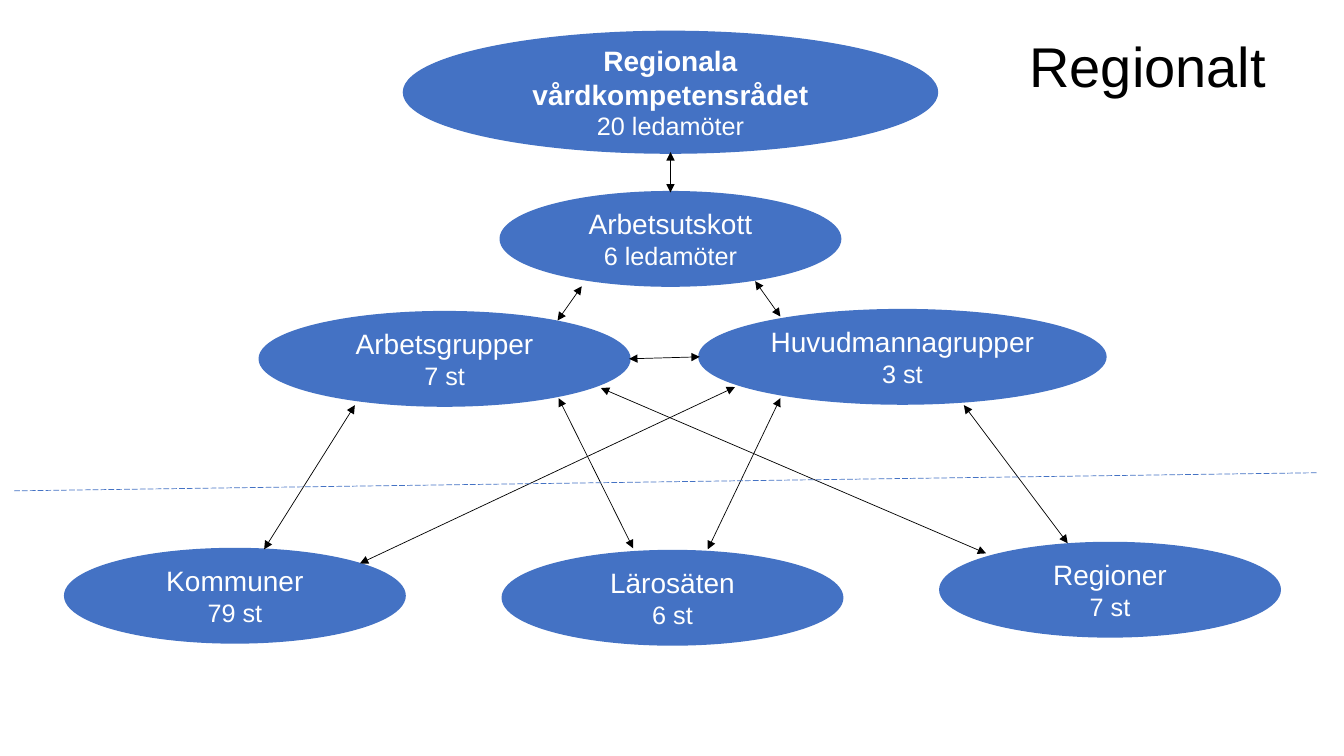
from lxml import etree
from pptx import Presentation
from pptx.dml.color import RGBColor
from pptx.enum import dml, shapes, text
from pptx.oxml.ns import qn
from pptx.util import Inches, Pt

FONT = "Arial"
BLUE, BLACK, WHITE = "4472C4", "000000", "FFFFFF"


def colour(value):
    return RGBColor.from_string(value)


def add_span(para, words, size, shade, bold=False):
    span = para.add_run()
    span.text = words
    span.font.name = FONT
    span.font.size = Pt(size)
    span.font.bold = bold
    span.font.color.rgb = colour(shade)


def add_oval(page, left, top, width, height, name, count, bold=False):
    oval = page.shapes.add_shape(shapes.MSO_SHAPE.OVAL, Inches(left), Inches(top),
                                 Inches(width), Inches(height))
    oval.shadow.inherit = False
    oval.fill.solid()
    oval.fill.fore_color.rgb = colour(BLUE)
    oval.line.color.rgb = colour(BLUE)
    oval.line.width = Pt(2.25)
    frame = oval.text_frame
    frame.word_wrap = True
    frame.vertical_anchor = text.MSO_ANCHOR.MIDDLE
    name_para, count_para = frame.paragraphs[0], frame.add_paragraph()
    add_span(name_para, name, 20, WHITE, bold)
    add_span(count_para, count, 18, WHITE)
    for para in (name_para, count_para):
        para.alignment = text.PP_ALIGN.CENTER
    return oval


def add_line(page, start, end, shade):
    line = page.shapes.add_connector(shapes.MSO_CONNECTOR.STRAIGHT, *start, *end)
    line.line.color.rgb = colour(shade)
    line.line.width = Pt(0.5)
    etree.SubElement(line._element.spPr, qn("a:effectLst"))
    return line


def add_double_arrow(page, start, end):
    outline = add_line(page, start, end, BLACK).line._get_or_add_ln()
    for tag in ("a:headEnd", "a:tailEnd"):
        etree.SubElement(outline, qn(tag), type="triangle")


def draw_title(page, left, top, width, height):
    title = page.shapes.title
    title.left, title.top = Inches(left), Inches(top)
    title.width, title.height = Inches(width), Inches(height)
    frame = title.text_frame
    frame.word_wrap = False
    frame.auto_size = text.MSO_AUTO_SIZE.SHAPE_TO_FIT_TEXT
    frame.vertical_anchor = text.MSO_ANCHOR.TOP
    para = frame.paragraphs[0]
    para.alignment = text.PP_ALIGN.LEFT
    para.line_spacing = 1.0
    add_span(para, "Regionalt", 40, BLACK)


def draw_council(page, left, top):
    """Council, its committee and the two kinds of groups."""
    return {
        "council": add_oval(page, left + 1.43, top, 5.28, 1.19,
                            "Regionala vårdkompetensrådet", "20 ledamöter", bold=True),
        "committee": add_oval(page, left + 2.39, top + 1.59, 3.36, 0.92,
                              "Arbetsutskott", "6 ledamöter"),
        "work": add_oval(page, left, top + 2.78, 3.66, 0.92, "Arbetsgrupper", "7 st"),
        "principals": add_oval(page, left + 4.36, top + 2.76, 4.02, 0.92,
                               "Huvudmannagrupper", "3 st"),
    }


def draw_parties(page, left, top):
    """Row of the parties the groups work with."""
    parties = [
        ("towns", "Kommuner", "79 st", 0.06),
        ("colleges", "Lärosäten", "6 st", 0.08),
        ("regions", "Regioner", "7 st", 0),
    ]
    return {key: add_oval(page, left + 4.34 * i, top + drop, 3.36, 0.92, name, count)
            for i, (key, name, count, drop) in enumerate(parties)}


def draw_links(page, ovals):
    # Each end is an oval and an offset in inches from its top left corner
    links = [
        ("council", 2.64, 1.19, "committee", 1.68, 0),
        ("committee", 0.8, 0.93, "work", 2.95, 0.08),
        ("committee", 2.52, 0.88, "principals", 0.8, 0.06),
        ("towns", 1.97, 0, "work", 0.94, 0.92),
        ("colleges", 2.03, -0.02, "principals", 0.8, 0.87),
        ("colleges", 1.29, -0.03, "work", 2.96, 0.85),
        ("towns", 2.92, 0.14, "principals", 0.35, 0.76),
        ("regions", 1.26, 0, "principals", 2.62, 0.94),
        ("regions", 0.45, 0.1, "work", 3.38, 0.75),
        ("work", 3.66, 0.46, "principals", 0, 0.46),
    ]

    def point(key, dx, dy):
        return ovals[key].left + Inches(dx), ovals[key].top + Inches(dy)

    for link in links:
        add_double_arrow(page, point(*link[:3]), point(*link[3:]))


def draw_divider(page, left, top, width, height):
    divider = add_line(page, (Inches(left), Inches(top + height)),
                       (Inches(left + width), Inches(top)), BLUE)
    divider.line.dash_style = dml.MSO_LINE.LONG_DASH


def main():
    deck = Presentation()
    deck.slide_width, deck.slide_height = Inches(13.33), Inches(7.5)
    page = deck.slides.add_slide(deck.slide_layouts[5])
    draw_title(page, 10.11, 0.26, 2.57, 0.77)
    ovals = draw_council(page, 2.58, 0.32) | draw_parties(page, 0.65, 5.39)
    draw_links(page, ovals)
    draw_divider(page, 0.14, 4.69, 12.93, 0.18)
    deck.save("out.pptx")


if __name__ == "__main__":
    main()
